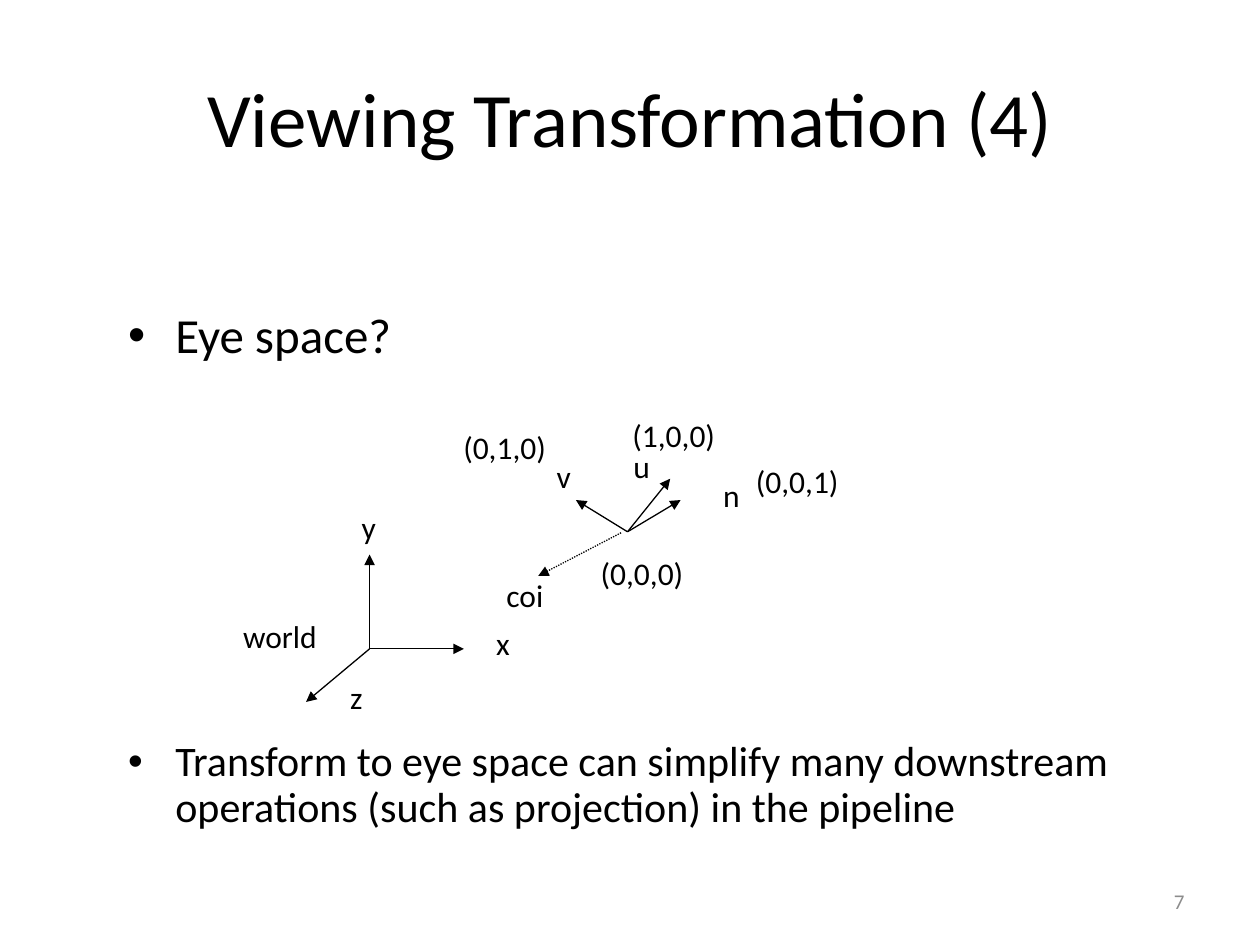
import pptx
import pptx.dml.color
import pptx.enum.dml
import pptx.enum.shapes
import pptx.enum.text
import pptx.oxml.ns
import pptx.util
from lxml import etree
from pptx.util import Cm

FONT = "Calibri"
COLOURS = {"ink": "000000", "muted": "8C8C8C", "paper": "FFFFFF"}

TITLE = "Viewing Transformation (4)"
# text, size and space before in points; the second gap leaves room for the diagram
BULLETS = [
    ("Eye space?", 28, 5.6),
    ("Transform to eye space can simplify many downstream operations "
     "(such as projection) in the pipeline", 24, 215),
]
PAGE_NUMBER = "7"

# All positions below are in centimetres.
WORLD_ORIGIN = (7.45, 13.08)
WORLD_TIPS = [(7.45, 11.18), (9.35, 13.08), (6.17, 14.15)]
WORLD_LABEL = ("world", 4.65, 12.32, 2.06)
EYE_ORIGIN = (12.65, 10.72)
EYE_TIPS = [(11.61, 10.08), (13.51, 9.65), (13.72, 10.08)]
GAZE = ((12.52, 10.74), (10.85, 11.61))
LABELS = [  # text, left, top, width
    ("u", 12.52, 8.89, 0.86),
    ("v", 10.97, 9.09, 0.84),
    ("n", 14.33, 9.47, 0.86),
    ("x", 9.75, 12.45, 0.81),
    ("y", 7.04, 10.11, 0.84),
    ("z", 6.81, 13.54, 0.79),
    ("(0,0,0)", 11.86, 11.05, 2.62),
    ("coi", 9.96, 11.48, 1.3),
    ("(1,0,0)", 12.5, 8.26, 2.44),
    ("(0,1,0)", 9.09, 8.51, 2.44),
    ("(0,0,1)", 14.99, 9.19, 2.44),
]
LABEL_HEIGHT = 1.02


def rgb(name):
    return pptx.dml.color.RGBColor.from_string(COLOURS[name])


def place(shape, left, top, width, height):
    shape.left, shape.top = Cm(left), Cm(top)
    shape.width, shape.height = Cm(width), Cm(height)


def write(paragraph, text, size, colour="ink"):
    run = paragraph.add_run()
    run.text = text
    run.font.name = FONT
    run.font.size = pptx.util.Pt(size)
    run.font.color.rgb = rgb(colour)


def add_arrow(shapes, start, end, dotted=False):
    arrow = shapes.add_connector(
        pptx.enum.shapes.MSO_CONNECTOR.STRAIGHT, *map(Cm, start + end))
    arrow.line.color.rgb = rgb("ink")
    arrow.line.width = pptx.util.Pt(0.75)
    if dotted:
        arrow.line.dash_style = pptx.enum.dml.MSO_LINE.ROUND_DOT
    properties = arrow._element.spPr
    outline = properties.find(pptx.oxml.ns.qn("a:ln"))
    etree.SubElement(outline, pptx.oxml.ns.qn("a:tailEnd"), type="triangle")
    etree.SubElement(properties, pptx.oxml.ns.qn("a:effectLst"))


def add_label(shapes, text, left, top, width):
    label = shapes.add_textbox(Cm(left), Cm(top), Cm(width), Cm(LABEL_HEIGHT))
    label.text_frame.word_wrap = False
    label.text_frame.auto_size = pptx.enum.text.MSO_AUTO_SIZE.SHAPE_TO_FIT_TEXT
    write(label.text_frame.paragraphs[0], text, 18)


def fill_text(slide):
    title, body = slide.placeholders
    place(title, 1.27, 0.76, 22.86, 3.18)
    title.text_frame.vertical_anchor = pptx.enum.text.MSO_ANCHOR.MIDDLE
    heading = title.text_frame.paragraphs[0]
    heading.alignment = pptx.enum.text.PP_ALIGN.CENTER
    write(heading, TITLE, 44)

    place(body, 2.33, 6.15, 21.59, 11.43)
    body.text_frame.auto_size = pptx.enum.text.MSO_AUTO_SIZE.NONE
    for index, (text, size, gap) in enumerate(BULLETS):
        frame = body.text_frame
        bullet = frame.add_paragraph() if index else frame.paragraphs[0]
        bullet.line_spacing = 0.9
        bullet.space_before = pptx.util.Pt(gap)
        indent = bullet._p.get_or_add_pPr()
        indent.set("marL", str(Cm(0.95)))
        indent.set("indent", str(-Cm(0.95)))
        write(bullet, text, size)

    number = slide.shapes.add_textbox(Cm(18.2), Cm(17.65), Cm(5.93), Cm(1.02))
    number.text_frame.word_wrap = True
    number.text_frame.vertical_anchor = pptx.enum.text.MSO_ANCHOR.MIDDLE
    page = number.text_frame.paragraphs[0]
    page.alignment = pptx.enum.text.PP_ALIGN.RIGHT
    write(page, PAGE_NUMBER, 12, "muted")


def draw_spaces(slide):
    world = slide.shapes.add_group_shape()
    for tip in WORLD_TIPS:
        add_arrow(world.shapes, WORLD_ORIGIN, tip)
    add_label(world.shapes, *WORLD_LABEL)

    for tip in EYE_TIPS:
        add_arrow(slide.shapes, EYE_ORIGIN, tip)
    add_arrow(slide.shapes, *GAZE, dotted=True)
    for label in LABELS:
        add_label(slide.shapes, *label)


def main():
    deck = pptx.Presentation()
    deck.slide_width, deck.slide_height = Cm(25.4), Cm(19.05)
    slide = deck.slides.add_slide(deck.slide_layouts[1])
    slide.background.fill.solid()
    slide.background.fill.fore_color.rgb = rgb("paper")
    fill_text(slide)
    draw_spaces(slide)
    deck.save("out.pptx")


if __name__ == "__main__":
    main()
